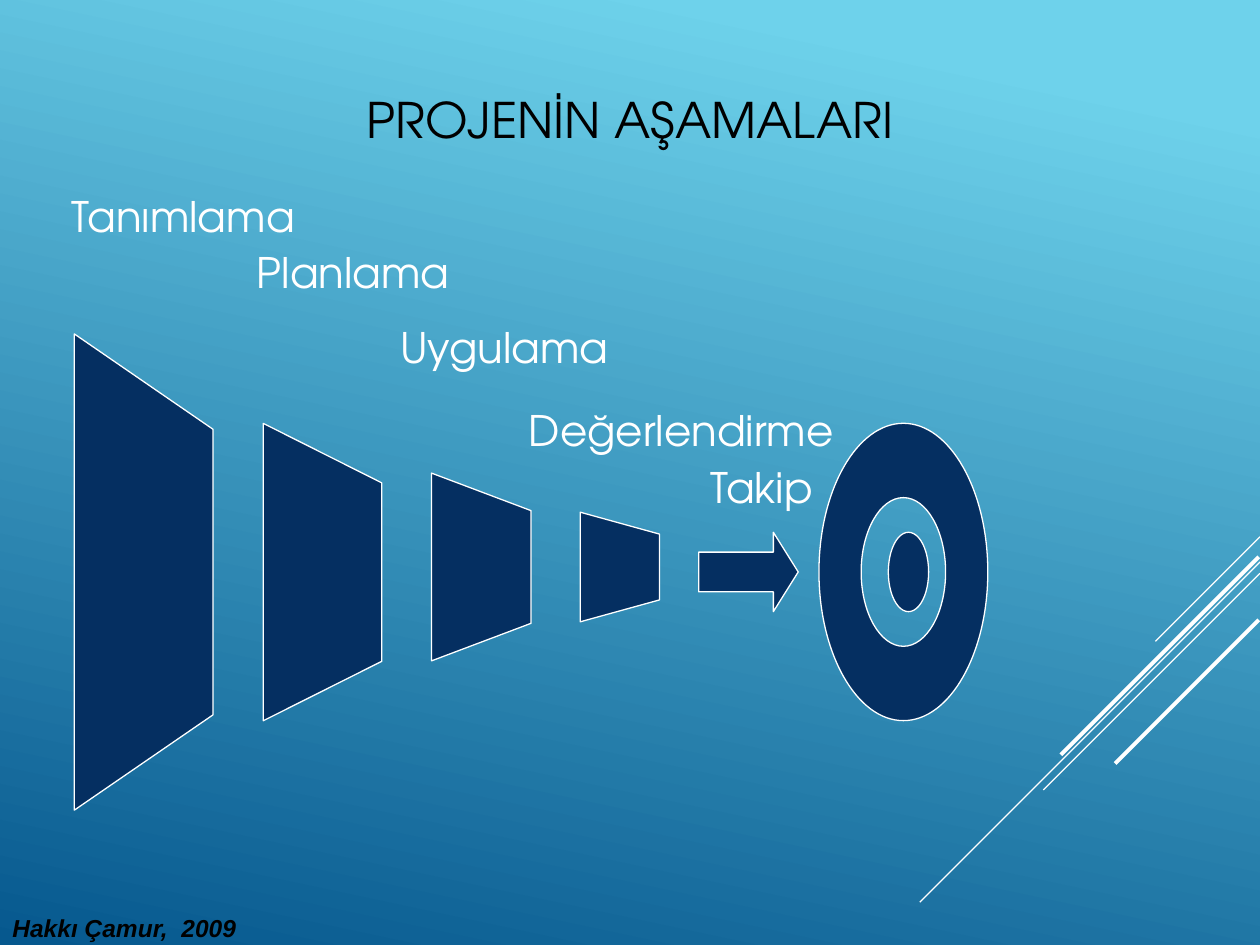
import pptx
import pptx.dml.color
import pptx.enum.shapes
import pptx.enum.text
import pptx.oxml
import pptx.oxml.ns
import pptx.util
from pptx.util import Inches

RGBColor = pptx.dml.color.RGBColor
SHAPE = pptx.enum.shapes.MSO_SHAPE
ALIGN = pptx.enum.text.PP_ALIGN
ANCHOR = pptx.enum.text.MSO_ANCHOR
FIT = pptx.enum.text.MSO_AUTO_SIZE
NAMESPACE = pptx.oxml.ns.nsdecls("a")

WHITE = RGBColor(0xFF, 0xFF, 0xFF)
BLACK = RGBColor(0x00, 0x00, 0x00)
NAVY = RGBColor(0x05, 0x2F, 0x61)
SKY = RGBColor(0x6E, 0xD2, 0xEB)
OCEAN = RGBColor(0x06, 0x58, 0x8E)
FONT = "TeX Gyre Adventor"

AXIS_Y = 4.54  # centre line of the arrow and the target
QUARTER = 0.55  # control point ratio of a quarter ellipse

# right end x, y; horizontal (and vertical) run; width in points
DIAGONALS = [
    (10, 4.26, 0.83, 0.75),
    (10, 4.46, 2.7, 0.75),
    (10, 4.55, 1.72, 0.75),
    (9.99, 4.42, 1.57, 2.25),
    (9.99, 4.92, 1.14, 2.25),
]
# centre x, centre y, height, width as seen on the slide
FUNNEL = [(1.14, 4.54, 3.78, 1.1), (2.56, 4.54, 2.36, 0.94),
          (3.82, 4.5, 1.49, 0.79), (4.92, 4.5, 0.87, 0.63)]
# text, left, top, width
STAGES = [
    ("Değerlendirme", 4.1, 3.16, 2.64),
    ("Uygulama", 3.08, 2.5, 1.97),
    ("Planlama", 1.94, 1.91, 1.74),
    ("Tanımlama", 0.47, 1.46, 2),
    ("Takip", 5.54, 3.61, 1.04),
]


def paint_background(slide):
    fill = slide.background.fill
    fill.gradient()
    fill.gradient_angle = 360 - 102
    for stop, color, position in zip(fill.gradient_stops, (SKY, OCEAN), (0.1, 1)):
        stop.color.rgb = color
        stop.position = position


def add_diagonal(slide, x, y, run, width):
    line = slide.shapes.add_connector(
        pptx.enum.shapes.MSO_CONNECTOR.STRAIGHT,
        Inches(x), Inches(y), Inches(x - run), Inches(y + run))
    line.line.color.rgb = WHITE
    line.line.width = pptx.util.Pt(width)
    line._element.spPr.append(
        pptx.oxml.parse_xml(f"<a:effectLst {NAMESPACE}/>"))


def style(shape):
    shape.shadow.inherit = False
    shape.fill.solid()
    shape.fill.fore_color.rgb = NAVY
    shape.line.color.rgb = WHITE
    shape.line.width = pptx.util.Pt(0.75)


def add_centered(slide, kind, center_x, center_y, width, height, rotation=0):
    shape = slide.shapes.add_shape(
        kind, Inches(center_x - width / 2), Inches(center_y - height / 2),
        Inches(width), Inches(height))
    shape.rotation = rotation
    style(shape)
    return shape


def quadrant_points(center_x, radius_x, radius_y, turn):
    """Left, top, right, bottom and left again; turn -1 goes bottom first."""
    steps = [(-1, 0), (0, -turn), (1, 0), (0, turn), (-1, 0)]
    return [(Inches(center_x + radius_x * x), Inches(AXIS_Y + radius_y * y))
            for x, y in steps]


def round_corners(shape):
    """Turn the straight sides between quadrant points into quarter ellipses."""
    points = list(shape._element.iter(pptx.oxml.ns.qn("a:pt")))
    previous = None
    for index, point in enumerate(points):
        x, y = int(point.get("x")), int(point.get("y"))
        side = point.getparent()
        if side.tag == pptx.oxml.ns.qn("a:lnTo"):
            start_x, start_y = previous
            # each contour has five points and leaves its first one vertically
            corner = (start_x, y) if index % 5 % 2 else (x, start_y)
            controls = [
                tuple(round(p + QUARTER * (c - p)) for p, c in zip(end, corner))
                for end in (previous, (x, y))]
            marks = "".join(f'<a:pt x="{px}" y="{py}"/>'
                            for px, py in controls + [(x, y)])
            curve = pptx.oxml.parse_xml(
                f"<a:cubicBezTo {NAMESPACE}>{marks}</a:cubicBezTo>")
            side.getparent().replace(side, curve)
        previous = (x, y)


def add_ring(slide, center_x, width, height):
    """Elliptical ring whose hole is half as wide and half as high."""
    rim = quadrant_points(center_x, width / 2, height / 2, 1)
    hole = quadrant_points(center_x, width / 4, height / 4, -1)
    builder = slide.shapes.build_freeform(*rim[0])
    builder.add_line_segments(rim[1:], close=True)
    builder.move_to(*hole[0])
    builder.add_line_segments(hole[1:], close=True)
    ring = builder.convert_to_shape()
    round_corners(ring)
    style(ring)


def add_text(slide, text, left, top, width, height, size=24, font=FONT,
             color=WHITE, bold=False, italic=False, align=ALIGN.LEFT,
             anchor=ANCHOR.TOP, wrap=True, fit=FIT.SHAPE_TO_FIT_TEXT):
    box = slide.shapes.add_textbox(
        Inches(left), Inches(top), Inches(width), Inches(height))
    frame = box.text_frame
    frame.word_wrap = wrap
    frame.auto_size = fit
    frame.vertical_anchor = anchor
    paragraph = frame.paragraphs[0]
    paragraph.alignment = align
    run = paragraph.add_run()
    run.text = text
    run.font.name = font
    run.font.size = pptx.util.Pt(size)
    run.font.color.rgb = color
    run.font.bold = bold
    run.font.italic = italic


def main():
    deck = pptx.Presentation()
    deck.slide_width = Inches(10)
    deck.slide_height = Inches(7.5)
    slide = deck.slides.add_slide(deck.slide_layouts[6])

    # Backdrop
    paint_background(slide)
    for diagonal in DIAGONALS:
        add_diagonal(slide, *diagonal)

    # Funnel: turned on its side, so width and height swap
    for center_x, center_y, height, width in FUNNEL:
        add_centered(slide, SHAPE.FLOWCHART_MANUAL_OPERATION,
                     center_x, center_y, height, width, rotation=270)

    # Target and the arrow towards it
    add_ring(slide, 7.17, 1.34, 2.36)
    arrow = add_centered(slide, SHAPE.RIGHT_ARROW, 5.94, AXIS_Y, 0.79, 0.63)
    arrow.adjustments[1] = 0.313
    add_centered(slide, SHAPE.OVAL, 7.21, AXIS_Y, 0.32, 0.63)

    # Stage names
    for stage, left, top, width in STAGES:
        add_text(slide, stage, left, top, width, 0.5, wrap=False)

    # Footer and title
    add_text(slide, "Hakkı Çamur,  2009", 0, 7.2, 2.4, 0.33, size=14,
             font="Arial", color=BLACK, bold=True, italic=True)
    add_text(slide, "PROJENİN AŞAMALARI", 0.69, 0.4, 8.62, 1.09, size=28,
             color=BLACK, align=ALIGN.CENTER, anchor=ANCHOR.MIDDLE, fit=FIT.NONE)

    deck.save("out.pptx")


if __name__ == "__main__":
    main()
